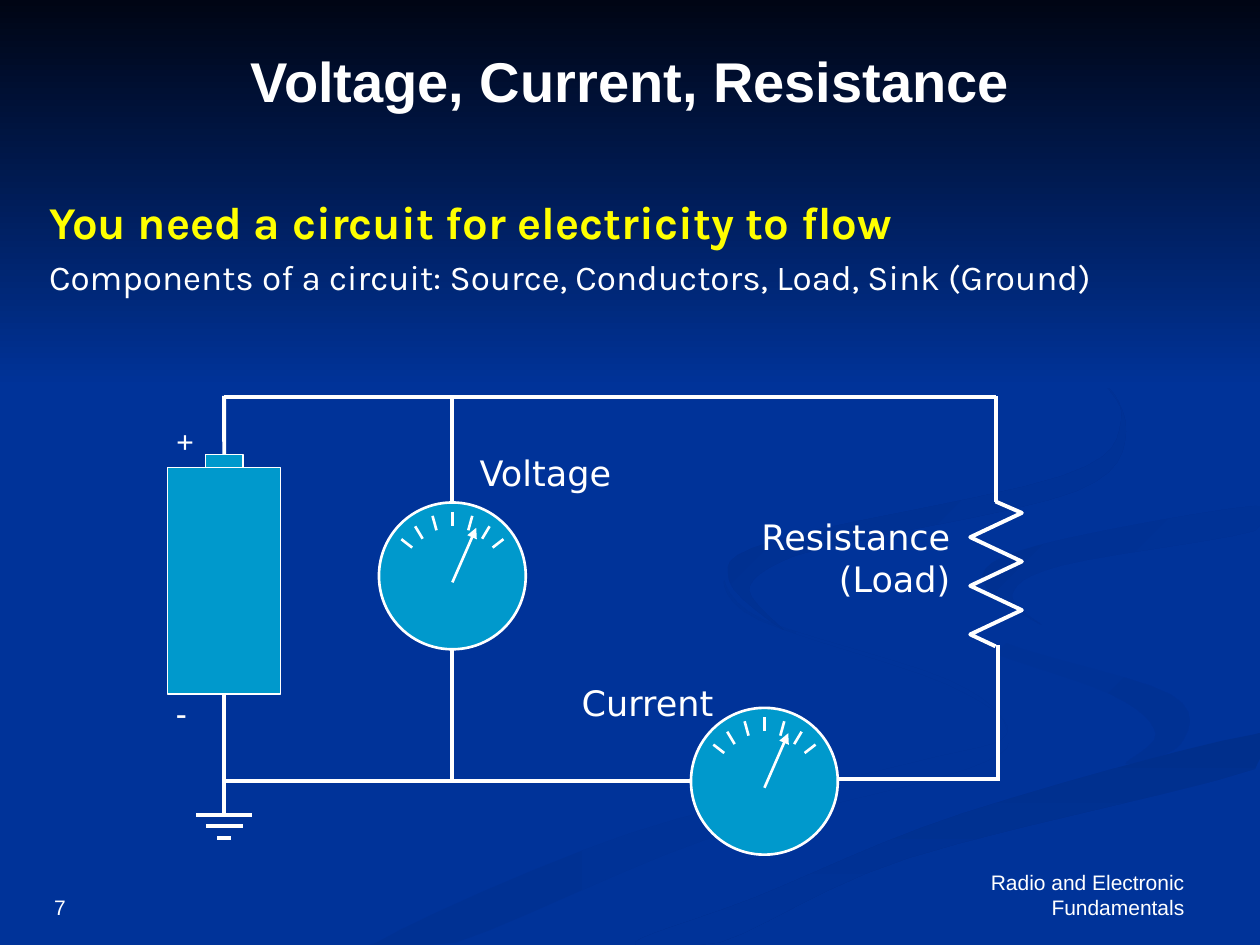
"""Build a slide that explains voltage, current and resistance with a circuit."""
from lxml import etree
from pptx import Presentation
from pptx.dml.color import RGBColor
from pptx.enum.shapes import MSO_CONNECTOR, MSO_SHAPE
from pptx.enum.text import MSO_ANCHOR, PP_ALIGN
from pptx.oxml.ns import qn
from pptx.util import Cm, Pt

LEFT, CENTER, RIGHT = PP_ALIGN.LEFT, PP_ALIGN.CENTER, PP_ALIGN.RIGHT
TOP, MIDDLE, BOTTOM = MSO_ANCHOR.TOP, MSO_ANCHOR.MIDDLE, MSO_ANCHOR.BOTTOM
RECT, OVAL = MSO_SHAPE.RECTANGLE, MSO_SHAPE.OVAL
STRAIGHT = MSO_CONNECTOR.STRAIGHT
WIDTH, HEIGHT = 25.4, 19.05
BLUE = "003399"

SWIRLS = [
    ("003193", BLUE, 0, [
        (14.6, 11.7), (15.3, 12.5), (19.1, 13.8), (20.3, 14.8), (18.3, 15.4),
        (12.7, 16.8), (7.6, 19), (9.2, 19), (14.3, 16.9), (19.5, 15.5),
        (20.3, 14.7), (19.1, 13.7), (15.4, 12.5)]),
    (BLUE, "003193", 45, [
        (18.4, 11.8), (19.4, 12.9), (22.4, 14), (23.3, 14.8), (22.7, 15.4),
        (23.8, 15), (23.6, 14), (20.1, 12.9)]),
    ("002F8C", BLUE, 90, [
        (12.8, 19), (14.5, 19), (18.3, 17.3), (25.3, 15.5), (25.3, 14.8),
        (19.4, 16.4), (15.2, 18.1)]),
    ("003091", BLUE, 45, [
        (19.8, 11.7), (21, 12.6), (20.4, 12), (21.4, 11.4), (25.3, 10.7),
        (25.3, 10.2), (20.9, 11)]),
    ("002F8E", BLUE, 45, [
        (17.3, 10.9), (21.7, 9.9), (22.7, 8.7), (21.9, 7.4), (19.4, 5.9),
        (21.9, 7.4), (22.6, 8.5), (21.4, 9.6), (15.6, 10.9), (14.7, 11.7),
        (15.8, 12.7), (15.1, 11.9), (15.8, 11.3)]),
]


def rgb(value):
    """Turn a hex string into a colour."""
    return RGBColor.from_string(value)


def smooth(points, steps=6):
    """Return a closed spline through the points, kept on the slide."""
    n, curve = len(points), []
    for i in range(n):
        corners = [points[(i + k) % n] for k in (-1, 0, 1, 2)]
        for t in (k / steps for k in range(steps)):
            x, y = (b + t * (c - a) / 2 + t * t * (a - 2.5 * b + 2 * c - d / 2)
                    + t ** 3 * (1.5 * (b - c) + (d - a) / 2)
                    for a, b, c, d in zip(*corners))
            curve.append((min(x, WIDTH), min(y, HEIGHT)))
    return curve


def write(p, text, size=20, font="DejaVu Sans", color="FFFFFF", bold=False,
          align=LEFT, before=0):
    """Put formatted text into a paragraph."""
    p.text = text
    p.alignment = align
    p.space_before = Pt(before)
    for r in p.runs:
        r.font.size = Pt(size)
        r.font.name = font
        r.font.bold = bold
        r.font.color.rgb = rgb(color)


class CircuitSlide:
    """Hold the style and the current slide."""

    line_color = "FFFFFF"
    fill_color = "0099CC"
    wire_width = 2.25

    def __init__(self, s, background):
        """Take a slide and colour its background."""
        self.s = s
        s.background.fill.solid()
        s.background.fill.fore_color.rgb = rgb(background)

    def text(self, box, text, anchor=TOP, **fmt):
        """Add a wrapping text box and return its frame."""
        tf = self.s.shapes.add_textbox(*map(Cm, box)).text_frame
        tf.word_wrap = True
        tf.vertical_anchor = anchor
        write(tf.paragraphs[0], text, **fmt)
        return tf

    def outline(self, points, closed=True):
        """Add a freeform without a shadow."""
        (x, y), *rest = [(Cm(x), Cm(y)) for x, y in points]
        builder = self.s.shapes.build_freeform(x, y)
        builder.add_line_segments(rest, close=closed)
        sp = builder.convert_to_shape()
        sp.shadow.inherit = False
        return sp

    def gradient(self, sp, start, end, angle):
        """Fill a shape with a gradient and drop its line."""
        sp.line.fill.background()
        sp.fill.gradient()
        sp.fill.gradient_angle = (360 - angle) % 360
        for stop, color in zip(sp.fill.gradient_stops, (start, end)):
            stop.color.rgb = rgb(color)

    def resistor(self, points):
        """Add an open zigzag."""
        sp = self.outline(points, closed=False)
        sp.fill.background()
        sp.line.color.rgb = rgb(self.line_color)
        sp.line.width = Pt(self.wire_width)

    def shape(self, kind, box, width=0.75, parent=None):
        """Add a filled preset shape."""
        sp = (parent or self.s).shapes.add_shape(kind, *map(Cm, box))
        sp.shadow.inherit = False
        sp.fill.solid()
        sp.fill.fore_color.rgb = rgb(self.fill_color)
        sp.line.color.rgb = rgb(self.line_color)
        sp.line.width = Pt(width)
        return sp

    def wire(self, x1, y1, x2, y2, width=wire_width, parent=None, arrow=False):
        """Add a straight line, with an arrowhead at its end if asked."""
        shapes = (parent or self.s).shapes
        c = shapes.add_connector(STRAIGHT, Cm(x1), Cm(y1), Cm(x2), Cm(y2))
        c.line.color.rgb = rgb(self.line_color)
        c.line.width = Pt(width)
        sppr = c._element.spPr
        if arrow:
            etree.SubElement(sppr.find(qn("a:ln")), qn("a:tailEnd"), type="triangle")
        etree.SubElement(sppr, qn("a:effectLst"))
        return c

    def meter(self, cx, cy):
        """Add a grouped dial with seven ticks and a needle."""
        g = self.s.shapes.add_group_shape()
        self.shape(OVAL, (cx - 1.48, cy - 1.48, 2.96, 2.96), 1.5, g)
        self.wire(cx, cy - 1.29, cx, cy - 1.01, 1.5, g)
        for x1, y1, x2, y2 in [(0.4, 1.21, 0.32, 0.92), (0.75, 1, 0.6, 0.75),
                               (1.03, 0.74, 0.81, 0.57)]:
            for side in (-1, 1):
                self.wire(cx + side * x1, cy - y1, cx + side * x2, cy - y2, 1.5, g)
        self.wire(cx, cy + 0.13, cx + 0.48, cy - 0.97, 1.5, g, arrow=True)


def main():
    """Build and save the slide."""
    prs = Presentation()
    prs.slide_width, prs.slide_height = Cm(WIDTH), Cm(HEIGHT)
    slide = CircuitSlide(prs.slides.add_slide(prs.slide_layouts[6]), BLUE)
    for start, end, angle, points in SWIRLS:
        slide.gradient(slide.outline(smooth(points)), start, end, angle)
    slide.gradient(slide.shape(RECT, (0, 0, WIDTH, 7.82)), "000514", BLUE, 90)

    slide.text((18.21, 17.35, 5.92, 1.32), "Radio and Electronic Fundamentals",
               BOTTOM, size=12, font="Arial", align=RIGHT)
    slide.text((0.84, 17.35, 15.88, 1.32), "7", BOTTOM, size=12, font="Arial")
    slide.text((0.43, 0, 24.56, 3.23), "Voltage, Current, Resistance", MIDDLE,
               size=32, font="Arial", bold=True, align=CENTER)
    tf = slide.text((0.74, 3.78, 23.88, 3.25),
                    "You need a circuit for electricity to flow", size=26,
                    font="Karla", color="FFFF00", bold=True, before=5)
    write(tf.add_paragraph(),
          "Components of a circuit: Source, Conductors, Load, Sink (Ground)",
          font="Karla", before=4)

    zigzag = [(19.56 if i % 2 else 20.6, 10.34 + 0.49 * i) for i in range(6)]
    slide.resistor([(20.07, 10.11), *zigzag, (20.07, 13.03)])
    battery = slide.shape(RECT, (3.38, 9.42, 2.28, 4.57))
    cap = slide.shape(RECT, (4.14, 9.17, 0.76, 0.25))
    slide.wire(4.52, 9.17, 4.52, 7.98).begin_connect(cap, 0)
    slide.wire(4.52, 13.99, 4.52, 16.41).begin_connect(battery, 2)
    for ends in [(20.07, 10.11, 20.07, 7.98), (20.12, 13, 20.12, 15.75),
                 (20.07, 8, 4.52, 8), (20.09, 15.7, 16.87, 15.7),
                 (13.92, 15.75, 4.52, 15.75), (9.12, 10.13, 9.12, 8),
                 (9.12, 13.1, 9.12, 15.72)]:
        slide.wire(*ends)
    for i, half in enumerate((0.56, 0.37, 0.14)):
        y = 16.43 + 0.23 * i
        slide.wire(4.52 - half, y, 4.52 + half, y)
    slide.meter(9.12, 11.61)
    slide.meter(15.41, 15.75)

    for y, sign in [(8.38, "+"), (13.84, "-")]:
        slide.text((3.3, y, 1, 1.02), sign, size=18, font="Times New Roman", bold=True)
    slide.text((9.42, 8.97, 3.71, 1.09), "Voltage")
    slide.text((11.25, 13.61, 3.61, 1.09), "Current", align=CENTER)
    slide.text((14.96, 10.26, 4.45, 1.96), "Resistance\n(Load)", align=RIGHT)
    prs.save("out.pptx")


if __name__ == "__main__":
    main()
